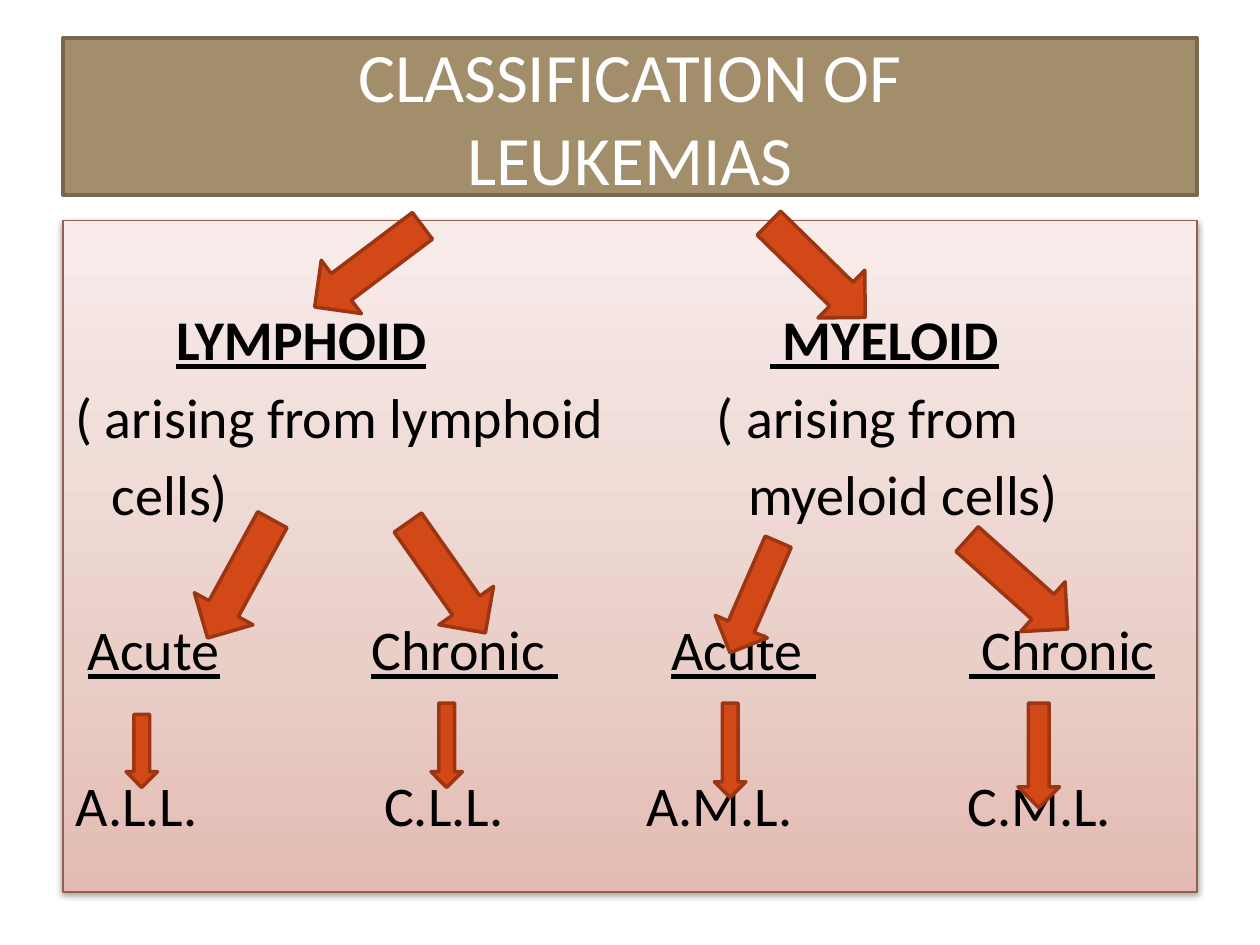
"""Build a slide that charts the classification of leukemias."""
import copy
import lxml.etree
import pptx
import pptx.util
import pptx.dml.color
import pptx.enum.shapes
import pptx.enum.text
import pptx.oxml
import pptx.oxml.ns

Inches = pptx.util.Inches
Pt = pptx.util.Pt
qn = pptx.oxml.ns.qn
kinds = pptx.enum.shapes.MSO_SHAPE
aligns = pptx.enum.text.PP_ALIGN
anchors = pptx.enum.text.MSO_ANCHOR


def tint(color, code):
    color.rgb = pptx.dml.color.RGBColor.from_string(code)


def paint(shape, fill, line, width):
    if fill:
        shape.fill.solid()
        tint(shape.fill.fore_color, fill)
    tint(shape.line.color, line)
    shape.line.width = Pt(width)


deck = pptx.Presentation()
deck.slide_width, deck.slide_height = Inches(10), Inches(7.5)
slide = deck.slides.add_slide(deck.slide_layouts[5])

title = slide.shapes.title
title.left, title.top = Inches(0.5), Inches(0.3)
title.width, title.height = Inches(9), Inches(1.25)
paint(title, "A28E6A", "78694E", 2)
frame = title.text_frame
frame.text = "CLASSIFICATION OF\vLEUKEMIAS"
frame.word_wrap = True
frame.auto_size = pptx.enum.text.MSO_AUTO_SIZE.NONE
frame.vertical_anchor = anchors.MIDDLE
frame.paragraphs[0].alignment = aligns.CENTER
for run in frame.paragraphs[0].runs:
    run.font.name, run.font.size = "Calibri", Pt(39.6)
    tint(run.font.color, "FFFFFF")

panel = slide.shapes.add_shape(
    kinds.RECTANGLE, Inches(0.5), Inches(1.75), Inches(9), Inches(5.33))
panel.fill.gradient()
panel.fill.gradient_angle = 90
stops = panel.fill._xPr.find(qn("a:gradFill")).find(qn("a:gsLst"))
stops.insert(1, copy.deepcopy(stops[0]))
shades = [(0, "E3BBB2"), (0.35, "EACFC9"), (1, "F8ECEA")]
for stop, (place, code) in zip(panel.fill.gradient_stops, shades):
    stop.position = place
    tint(stop.color, code)
paint(panel, None, "935F4E", 0.75)
panel.shadow.inherit = False
glow = panel._element.spPr.find(qn("a:effectLst"))
shade = lxml.etree.SubElement(glow, qn("a:outerShdw"), blurRad="40000",
                              dist="20000", dir="5400000", rotWithShape="0")
black = lxml.etree.SubElement(shade, qn("a:srgbClr"), val="000000")
lxml.etree.SubElement(black, qn("a:alpha"), val="38000")

frame = panel.text_frame
frame.word_wrap = True
frame.vertical_anchor = anchors.TOP
frame.margin_top = Inches(0.67)
near, far = 5.7, 50.4
rows = [
    (0, True, True, [(0.8, "LYMPHOID"), (5.51, " MYELOID")]),
    (near, False, False,
     [(0, "( arising from lymphoid"), (5.09, "( arising from")]),
    (near, False, False, [(0.29, "cells)"), (5.34, "myeloid cells)")]),
    (far, False, True, [(0.1, "Acute"), (2.35, "Chronic "),
                        (4.73, "Acute "), (7.09, " Chronic")]),
    (far, False, False, [(0, "A.L.L."), (2.45, "C.L.L."),
                         (4.53, "A.M.L."), (7.08, "C.M.L.")]),
]
for row, (gap, bold, under, cells) in enumerate(rows):
    para = frame.add_paragraph() if row else frame.paragraphs[0]
    para.alignment = aligns.LEFT
    para.space_before = Pt(gap)
    tabs = lxml.etree.SubElement(para._p.get_or_add_pPr(), qn("a:tabLst"))
    for place, label in cells:
        if place:
            lxml.etree.SubElement(
                tabs, qn("a:tab"), pos=str(Inches(place)), algn="l")
            para.add_run().text = "\t"
        run = para.add_run()
        run.text = label
        run.font.bold, run.font.underline = bold, under
    for run in para.runs:
        run.font.name, run.font.size = "Calibri", Pt(32)
        tint(run.font.color, "000000")

arrows = [
    (2.66, 1.58, 0.53, 1.07, 53),
    (6.22, 1.61, 0.53, 1.07, 314.4),
    (1.64, 4.06, 0.53, 1.07, 28.7),
    (3.28, 4.05, 0.53, 1.07, 324.9),
    (5.76, 4.26, 0.45, 0.96, 23.5),
    (7.81, 4.1, 0.53, 1.07, 311.8),
    (1, 5.67, 0.25, 0.58, 0),
    (3.42, 5.58, 0.25, 0.67, 0),
    (5.67, 5.58, 0.25, 0.75, 0),
    (8.08, 5.58, 0.33, 0.83, 0),
]
for *box, turn in arrows:
    arrow = slide.shapes.add_shape(kinds.DOWN_ARROW, *map(Inches, box))
    arrow.rotation = turn
    arrow.shadow.inherit = False
    paint(arrow, "D34817", "9C3511", 2)

deck.save("out.pptx")
